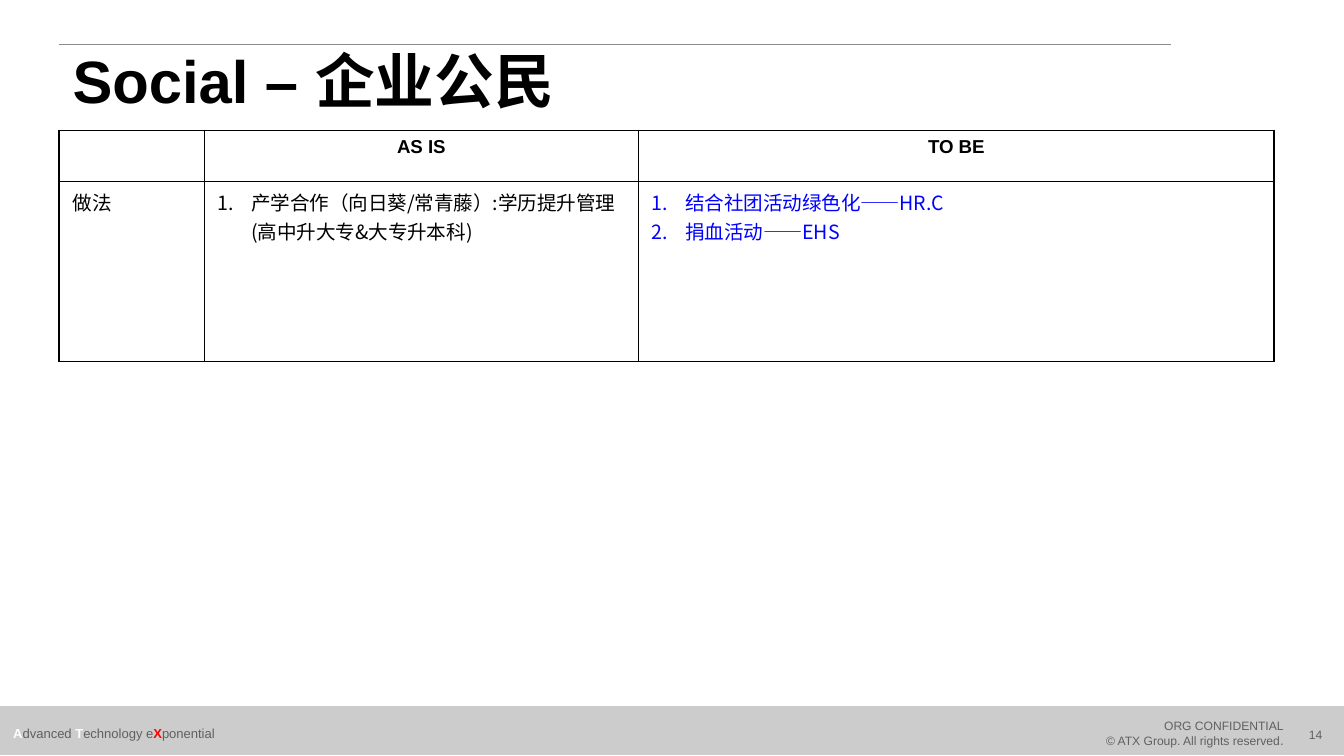
from lxml import etree
from pptx import Presentation
from pptx.dml.color import RGBColor
from pptx.enum.shapes import MSO_CONNECTOR, MSO_SHAPE
from pptx.enum.text import MSO_ANCHOR, MSO_AUTO_SIZE, PP_ALIGN
from pptx.oxml.ns import qn
from pptx.util import Inches, Pt

LEFT, CENTER, RIGHT = PP_ALIGN.LEFT, PP_ALIGN.CENTER, PP_ALIGN.RIGHT
MIDDLE = MSO_ANCHOR.MIDDLE
NO_FIT = MSO_AUTO_SIZE.NONE
RECT = MSO_SHAPE.RECTANGLE
STRAIGHT = MSO_CONNECTOR.STRAIGHT
LATIN, CJK = "Arial", "Noto Sans CJK SC"
BLACK, BLUE, GRAY, WHITE, RED = "000000", "0000FF", "606060", "FFFFFF", "FF0000"


def color(value):
    return RGBColor.from_string(value)


class SlideBuilder:
    def __init__(self, slide):
        self.slide = slide

    def run(self, p, text, size, fill=BLACK, bold=False, font=LATIN):
        r = p.add_run()
        r.text = text
        r.font.size = Pt(size)
        r.font.bold = bold
        r.font.name = font
        r.font.color.rgb = color(fill)
        etree.SubElement(r._r.get_or_add_rPr(), qn("a:ea"), typeface=CJK)

    def bar(self, x, y, w, h, fill):
        sp = self.slide.shapes.add_shape(RECT, Inches(x), Inches(y), Inches(w), Inches(h))
        sp.shadow.inherit = False
        sp.fill.solid()
        sp.fill.fore_color.rgb = color(fill)
        sp.line.color.rgb = color(fill)
        sp.line.width = Pt(1)

    def rule(self, x1, x2, y, fill):
        line = self.slide.shapes.add_connector(
            STRAIGHT, Inches(x1), Inches(y), Inches(x2), Inches(y))
        line.line.color.rgb = color(fill)
        line.line.width = Pt(0.5)
        etree.SubElement(line._element.spPr, qn("a:effectLst"))

    def text(self, x, y, w, h, paragraphs, align=LEFT):
        sp = self.slide.shapes.add_textbox(Inches(x), Inches(y), Inches(w), Inches(h))
        tf = sp.text_frame
        tf.word_wrap = True
        tf.vertical_anchor = MIDDLE
        for i, runs in enumerate(paragraphs):
            p = tf.add_paragraph() if i else tf.paragraphs[0]
            p.alignment = align
            for run in runs:
                self.run(p, *run)

    def title(self, text, x, y, w, h):
        sp = self.slide.shapes.title
        sp.left, sp.top, sp.width, sp.height = Inches(x), Inches(y), Inches(w), Inches(h)
        tf = sp.text_frame
        tf.auto_size = NO_FIT
        tf.vertical_anchor = MIDDLE
        p = tf.paragraphs[0]
        p.alignment = LEFT
        p.line_spacing = 0.9
        self.run(p, text, 32, bold=True)

    def table(self, x, y, cols, rows):
        frame = self.slide.shapes.add_table(
            len(rows), len(cols), Inches(x), Inches(y), Inches(sum(cols)), Inches(sum(rows)))
        table = frame.table
        table.first_row = table.horz_banding = False
        for column, width in zip(table.columns, cols):
            column.width = Inches(width)
        for row, height in zip(table.rows, rows):
            row.height = Inches(height)
        for cell in table.iter_cells():
            self.border(cell)
            cell.fill.background()
        return table

    def border(self, cell):
        tcPr = cell._tc.get_or_add_tcPr()
        for side in ("lnL", "lnR", "lnT", "lnB"):
            ln = etree.SubElement(tcPr, qn(f"a:{side}"), w=str(Pt(1)))
            fill = etree.SubElement(ln, qn("a:solidFill"))
            etree.SubElement(fill, qn("a:srgbClr"), val=BLACK)

    def cell(self, cell, text, size, align=LEFT, bold=False):
        p = cell.text_frame.paragraphs[0]
        p.alignment = align
        if text:
            self.run(p, text, size, bold=bold)
        else:
            etree.SubElement(p._p, qn("a:endParaRPr"), sz=str(size * 100))

    def numbered(self, cell, items, fill):
        tf = cell.text_frame
        for i, item in enumerate(items):
            p = tf.add_paragraph() if i else tf.paragraphs[0]
            pPr = p._p.get_or_add_pPr()
            pPr.set("marL", str(Inches(0.25)))
            pPr.set("indent", str(-Inches(0.25)))
            etree.SubElement(pPr, qn("a:buFont"), typeface=CJK)
            etree.SubElement(pPr, qn("a:buAutoNum"), type="arabicPeriod")
            self.run(p, item, 10.5, fill, font=CJK)


def main():
    prs = Presentation()
    prs.slide_width = Inches(10)
    prs.slide_height = prs.slide_width * 9 // 16
    s = SlideBuilder(prs.slides.add_slide(prs.slide_layouts[5]))

    s.bar(0, 5.26, 10, 0.35, "CCCCCC")
    s.text(9.51, 5.32, 0.56, 0.29, [[("14", 6.5, GRAY)]], CENTER)
    s.text(7.97, 5.3, 1.68, 0.31, [
        [("ORG CONFIDENTIAL", 6.5, GRAY)],
        [("© ATX Group. All rights reserved", 6.5, GRAY), (".", 7, GRAY)],
    ], RIGHT)
    s.text(0, 5.3, 1.91, 0.31, [[
        ("A", 7, WHITE, True), ("dvanced ", 7, GRAY),
        ("T", 7, WHITE, True), ("echnology e", 7, GRAY),
        ("X", 7, RED, True), ("ponential", 7, GRAY),
    ]])
    s.rule(0.44, 8.71, 0.33, "8A8A8A")
    s.title("Social – 企业公民", 0.44, 0.35, 8.62, 0.55)

    table = s.table(0.44, 0.97, [1.08, 3.23, 4.73], [0.38, 1.34])
    for col, heading in enumerate(["", "AS IS", "TO BE"]):
        s.cell(table.cell(0, col), heading, 10, CENTER, True)
    s.cell(table.cell(1, 0), "做法", 10.5)
    s.numbered(table.cell(1, 1),
               ["产学合作（向日葵/常青藤）:学历提升管理(高中升大专&大专升本科)"], BLACK)
    s.numbered(table.cell(1, 2), ["结合社团活动绿色化——HR.C", "捐血活动——EHS"], BLUE)

    prs.save("out.pptx")


if __name__ == "__main__":
    main()
